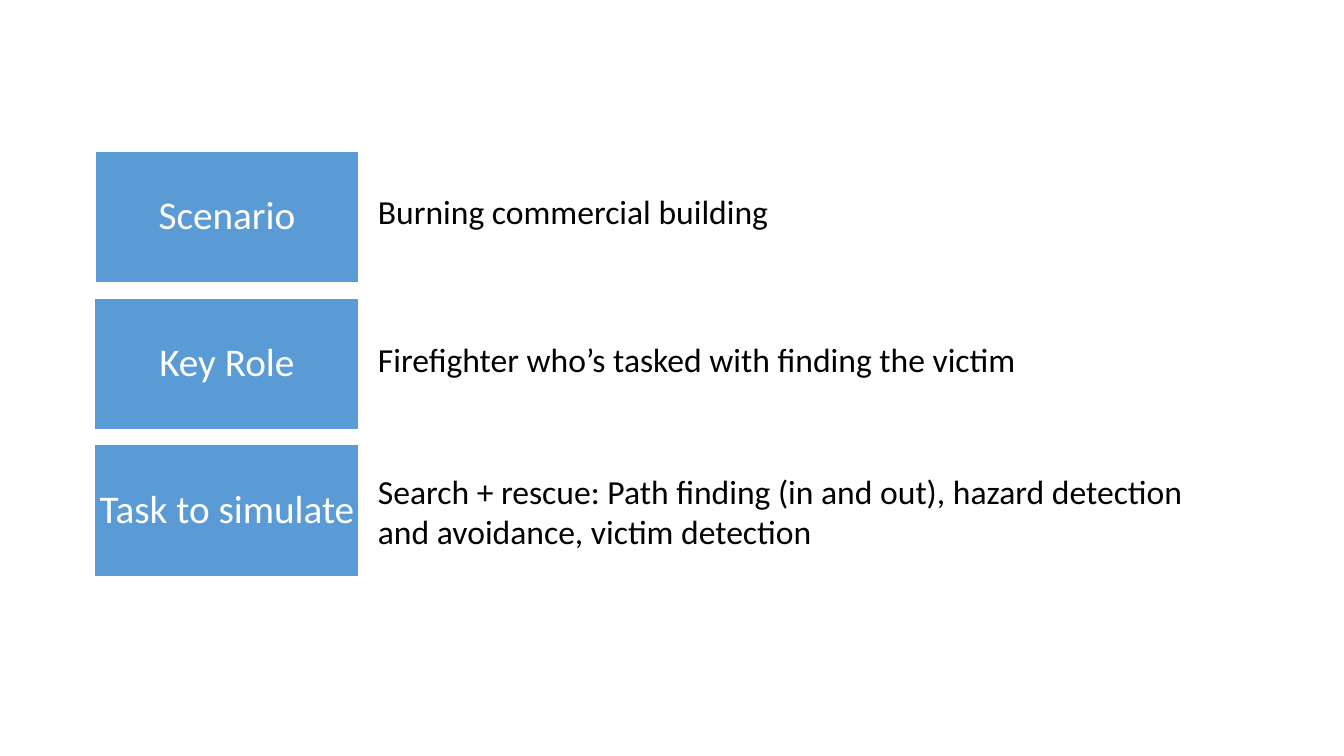
from pptx import Presentation
from pptx.dml.color import RGBColor
from pptx.enum.shapes import MSO_SHAPE
from pptx.enum.text import MSO_ANCHOR, MSO_AUTO_SIZE, PP_ALIGN
from pptx.util import Inches, Pt

BLUE = RGBColor(0x5B, 0x9B, 0xD5)
WHITE = RGBColor(0xFF, 0xFF, 0xFF)
BLACK = RGBColor(0x00, 0x00, 0x00)
FONT = "Calibri"

LEFT, TOP = 0.94, 1.5
LABEL_WIDTH, LABEL_HEIGHT = 2.62, 1.31
ROW_PITCH = 1.455
NOTE_LEFT = LEFT + LABEL_WIDTH + 0.09
LINE_HEIGHT, NOTE_MARGINS = 0.4, 0.1

# label, border in points, note width, note drop below the row's top, note lines
ROWS = [
    ("Scenario", 1.5, 4.11, 0.34, ["Burning commercial building"]),
    ("Key Role", 1, 6.59, 0.36, ["Firefighter who’s tasked with finding the victim"]),
    ("Task to simulate", 1, 8.34, 0.21,
     ["Search + rescue: Path finding (in and out), hazard detection",
      "and avoidance, victim detection"]),
]


def add_run(para, text, size, color):
    span = para.add_run()
    span.text = text
    span.font.name = FONT
    span.font.size = Pt(size)
    span.font.color.rgb = color


def add_label(page, top, text, border):
    box = page.shapes.add_shape(MSO_SHAPE.RECTANGLE, Inches(LEFT), Inches(top),
                                Inches(LABEL_WIDTH), Inches(LABEL_HEIGHT))
    box.shadow.inherit = False
    box.fill.solid()
    box.fill.fore_color.rgb = BLUE
    box.line.color.rgb = WHITE
    box.line.width = Pt(border)
    frame = box.text_frame
    frame.word_wrap = True
    frame.vertical_anchor = MSO_ANCHOR.MIDDLE
    frame.margin_left = frame.margin_right = Inches(0.03)
    frame.margin_top = frame.margin_bottom = Inches(0.03)
    para = frame.paragraphs[0]
    para.alignment = PP_ALIGN.CENTER
    para.line_spacing = 0.9
    add_run(para, text, 28, WHITE)


def add_note(page, top, width, lines):
    height = len(lines) * LINE_HEIGHT + NOTE_MARGINS
    box = page.shapes.add_textbox(Inches(NOTE_LEFT), Inches(top),
                                  Inches(width), Inches(height))
    frame = box.text_frame
    frame.word_wrap = False
    frame.auto_size = MSO_AUTO_SIZE.SHAPE_TO_FIT_TEXT
    for index, line in enumerate(lines):
        para = frame.add_paragraph() if index else frame.paragraphs[0]
        add_run(para, line, 24, BLACK)


def add_rows(page):
    for index, (label, border, width, drop, lines) in enumerate(ROWS):
        top = TOP + index * ROW_PITCH
        add_label(page, top, label, border)
        add_note(page, top + drop, width, lines)


def main():
    deck = Presentation()
    deck.slide_width = Inches(13.33)
    deck.slide_height = Inches(7.5)
    page = deck.slides.add_slide(deck.slide_layouts[6])
    add_rows(page)
    deck.save("out.pptx")


if __name__ == "__main__":
    main()
